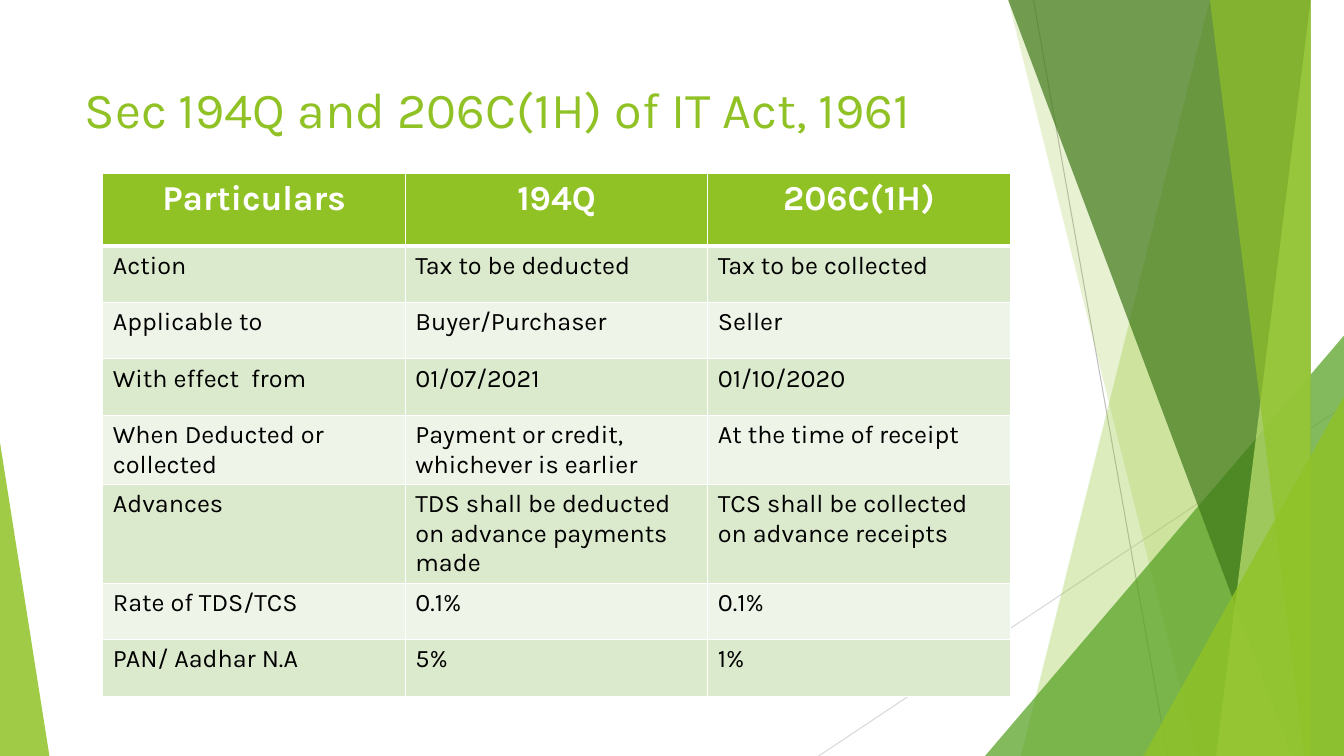
"""Build the slide comparing sections 194Q and 206C(1H) in a table beside green facets."""
from lxml import etree
from pptx import Presentation, util as u
from pptx.dml.color import RGBColor
from pptx.enum import shapes, text
from pptx.oxml.ns import qn

COLOURS = {"green": "90C226", "leaf": "54A021", "forest": "3F7819", "lime": "C0E474",
           "dark_band": "DBE9CD", "light_band": "EEF4E8", "white": "FFFFFF",
           "black": "000000", "line": "BFBFBF", "pale_line": "D9D9D9"}
WIDTH, HEIGHT = 13.33, 7.5


def write(frame, words, size=18, colour="black", bold=False, align=text.PP_ALIGN.LEFT):
    paragraph = frame.paragraphs[0]
    paragraph.alignment = align
    run = paragraph.add_run()
    run.text = words
    run.font.name = "Karla"
    run.font.size = u.Pt(size)
    run.font.bold = bold
    run.font.color.rgb = RGBColor.from_string(COLOURS[colour])


def paint(facet, colour, opacity):
    facet.shadow.inherit = False
    facet.line.fill.background()
    facet.fill.solid()
    facet.fill.fore_color.rgb = RGBColor.from_string(COLOURS[colour])
    tint = facet.fill._xPr.find(qn("a:solidFill"))[0]
    etree.SubElement(tint, qn("a:alpha")).set("val", str(opacity * 1000))


deck = Presentation()
deck.slide_width, deck.slide_height = u.Inches(WIDTH), u.Inches(HEIGHT)
slide = deck.slides.add_slide(deck.slide_layouts[5])

for x1, y1, x2, y2, colour in [(10.25, 0, 11.58, HEIGHT, "line"),
                               (WIDTH, 4.03, 8.12, HEIGHT, "pale_line")]:
    ray = slide.shapes.add_connector(shapes.MSO_CONNECTOR.STRAIGHT,
                                     *map(u.Inches, (x1, y1, x2, y2)))
    ray.line.color.rgb = RGBColor.from_string(COLOURS[colour])
    ray.line.width = u.Pt(0.75)
    etree.SubElement(ray._element.spPr, qn("a:effectLst"))

facets = [
    ("band", 12.28, 10.04, "green", 30),
    ("band", 10.5, 11.83, "green", 20),
    ("triangle", 9.77, 3.56, 4.17, 1, "leaf", 72),
    ("band", 10.21, 12.91, "forest", 70),
    ("band", 13.03, 11.92, "lime", 70),
    ("band", 11.96, 13.18, "green", 65),
    ("triangle", 11.34, 1.99, 3.57, 1, "green", 80),
    ("triangle", 0, 0.49, 3.11, 0, "green", 85),
]
for kind, *geometry, colour, opacity in facets:
    if kind == "band":
        top_left, bottom_left = geometry
        outline = slide.shapes.build_freeform(top_left, 0, scale=u.Inches(1))
        outline.add_line_segments([(WIDTH, 0), (WIDTH, HEIGHT), (bottom_left, HEIGHT)])
        facet = outline.convert_to_shape()
    else:
        left, width, height, apex = geometry
        facet = slide.shapes.add_shape(
            shapes.MSO_SHAPE.ISOSCELES_TRIANGLE,
            *map(u.Inches, (left, HEIGHT - height, width, height)))
        facet.adjustments[0] = apex
    paint(facet, colour, opacity)

heading = slide.shapes.title
heading.left, heading.top, heading.width, heading.height = map(u.Inches, (0.74, 0.67, 9.4, 0.81))
heading.text_frame.word_wrap = True
heading.text_frame.vertical_anchor = text.MSO_ANCHOR.MIDDLE
write(heading.text_frame, "Sec 194Q and 206C(1H) of IT Act, 1961", size=36, colour="green")

provisions = [
    ("Particulars", "194Q", "206C(1H)"),
    ("Action", "Tax to be deducted", "Tax to be collected"),
    ("Applicable to", "Buyer/Purchaser", "Seller"),
    ("With effect  from", "01/07/2021", "01/10/2020"),
    ("When Deducted or collected", "Payment or credit, whichever is earlier",
     "At the time of receipt"),
    ("Advances", "TDS shall be deducted on advance payments made",
     "TCS shall be collected on advance receipts"),
    ("Rate of TDS/TCS", "0.1%", "0.1%"),
    ("PAN/ Aadhar N.A", "5%", "1%"),
]
header_height, row_height, column_width = 0.72, 0.56, 3
comparison = slide.shapes.add_table(
    len(provisions), 3, u.Inches(1.02), u.Inches(1.72), u.Inches(3 * column_width),
    u.Inches(header_height + row_height * (len(provisions) - 1))).table

for r, provision in enumerate(provisions):
    is_header = r == 0
    comparison.rows[r].height = u.Inches(header_height if is_header else row_height)
    band = "green" if is_header else "dark_band" if r % 2 else "light_band"
    for c, words in enumerate(provision):
        cell = comparison.cell(r, c)
        cell.fill.solid()
        cell.fill.fore_color.rgb = RGBColor.from_string(COLOURS[band])
        if is_header:
            write(cell.text_frame, words, size=25, colour="white", bold=True,
                  align=text.PP_ALIGN.CENTER)
        else:
            write(cell.text_frame, words)
        properties = cell._tc.get_or_add_tcPr()
        for position, side in enumerate(("lnL", "lnR", "lnT", "lnB")):
            thick = (is_header and side == "lnB") or (r == 1 and side == "lnT")
            border = etree.Element(qn(f"a:{side}"), w=str(u.Pt(3 if thick else 1)))
            stroke = etree.SubElement(border, qn("a:solidFill"))
            etree.SubElement(stroke, qn("a:srgbClr"), val=COLOURS["white"])
            properties.insert(position, border)

deck.save("out.pptx")
